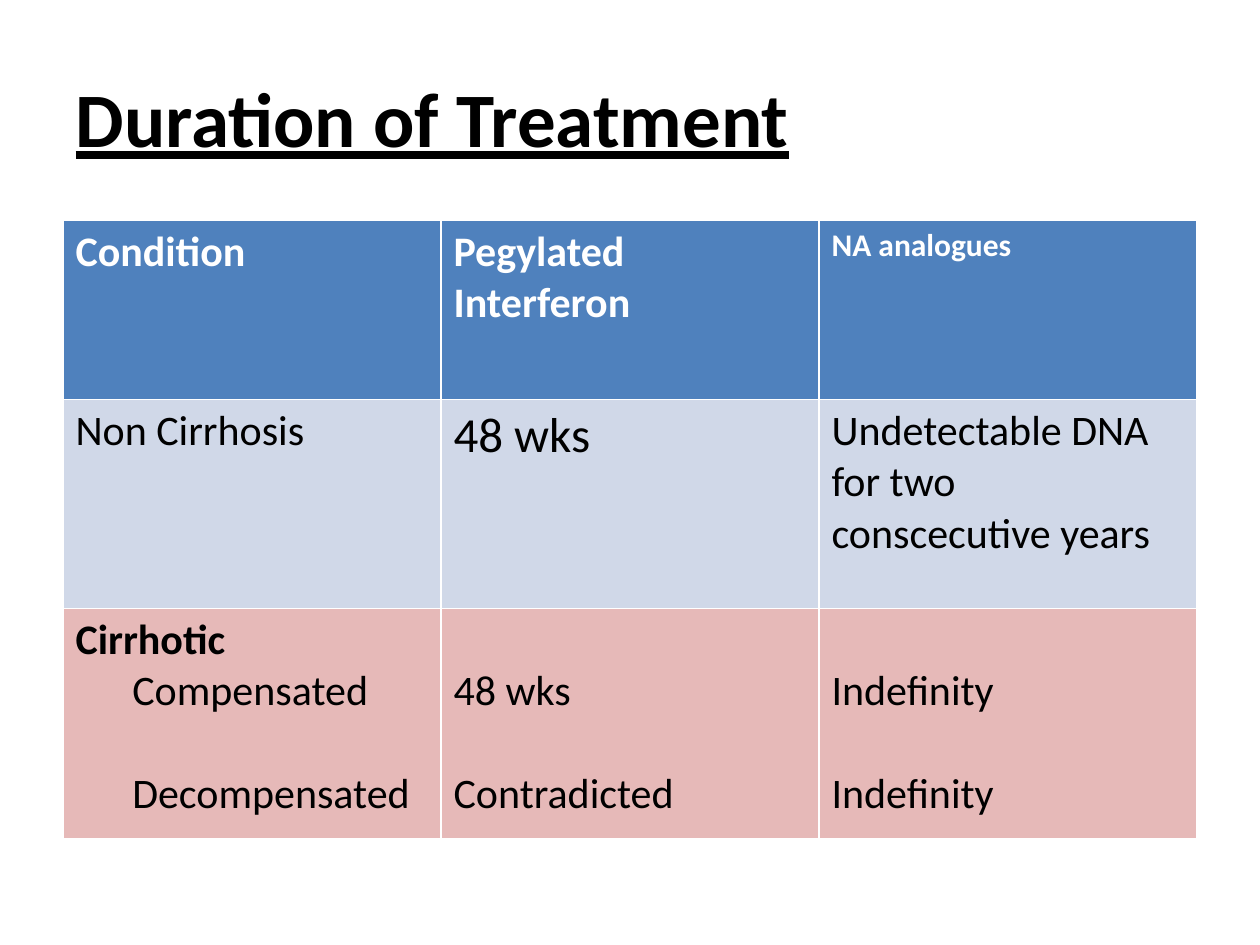
import pptx
import pptx.util
import pptx.dml.color
import pptx.enum.text

COLORS = {
    "ink": "000000",
    "white": "FFFFFF",
    "header": "4F81BD",
    "non_cirrhosis": "D0D8E8",
    "cirrhotic": "E6B9B8",
}
SLIDE_WIDTH, SLIDE_HEIGHT = pptx.util.Inches(10), pptx.util.Inches(7.5)
MARGIN = 0.05
LINE = 29.3
CELL_TOP = 0.05


def rgb(name):
    return pptx.dml.color.RGBColor.from_string(COLORS[name])


def place(left, top, width, height):
    return (
        int(SLIDE_WIDTH * left),
        int(SLIDE_HEIGHT * top),
        int(SLIDE_WIDTH * width),
        int(SLIDE_HEIGHT * height),
    )


def write(paragraph, text, size=24, color="ink", bold=False, underline=False,
          indent=0, before=0):
    paragraph.alignment = pptx.enum.text.PP_ALIGN.LEFT
    paragraph.space_before = pptx.util.Pt(before)
    if indent:
        properties = paragraph._p.get_or_add_pPr()
        properties.set("marL", str(pptx.util.Inches(indent)))
    run = paragraph.add_run()
    run.text = text
    run.font.name = "Calibri"
    run.font.size = pptx.util.Pt(size)
    run.font.bold = bold
    run.font.underline = underline
    run.font.color.rgb = rgb(color)


def add_title(slide, text):
    title = slide.shapes.title
    title.left, title.top, title.width, title.height = place(
        MARGIN, 0.04, 1 - 2 * MARGIN, 1 / 6)
    title.text_frame.vertical_anchor = pptx.enum.text.MSO_ANCHOR.MIDDLE
    write(title.text_frame.paragraphs[0], text, size=44, bold=True, underline=True)


def fill_cell(cell, lines, fill, skipped_lines=0):
    cell.fill.solid()
    cell.fill.fore_color.rgb = rgb(fill)
    cell.margin_top = pptx.util.Inches(CELL_TOP) + pptx.util.Pt(LINE * skipped_lines)
    for index, (text, style) in enumerate(lines):
        frame = cell.text_frame
        paragraph = frame.add_paragraph() if index else frame.paragraphs[0]
        write(paragraph, text, **style)


def add_treatment_table(slide, rows, heights):
    bounds = place(MARGIN, 1.75 / 7.5, 1 - 2 * MARGIN, sum(heights) / 7.5)
    table = slide.shapes.add_table(len(rows), len(rows[0][1]), *bounds).table
    for row, height, (fill, cells) in zip(table.rows, heights, rows):
        row.height = pptx.util.Inches(height)
        for cell, (lines, skipped_lines) in zip(row.cells, cells):
            fill_cell(cell, lines, fill, skipped_lines)


def main():
    deck = pptx.Presentation()
    deck.slide_width, deck.slide_height = SLIDE_WIDTH, SLIDE_HEIGHT
    slide = deck.slides.add_slide(deck.slide_layouts[5])
    add_title(slide, "Duration of Treatment")

    heading = {"color": "white", "bold": True}
    stage = {"indent": 0.45}
    spaced = {"before": LINE}
    rows = [
        ("header", [
            ([("Condition", heading)], 0),
            ([("Pegylated Interferon", heading)], 0),
            ([("NA analogues", {**heading, "size": 18})], 0),
        ]),
        ("non_cirrhosis", [
            ([("Non Cirrhosis", {})], 0),
            ([("48 wks", {"size": 28})], 0),
            ([("Undetectable DNA for two conscecutive years", {})], 0),
        ]),
        ("cirrhotic", [
            ([("Cirrhotic", {"bold": True}), ("Compensated", stage),
              ("Decompensated", {**stage, **spaced})], 0),
            ([("48 wks", {}), ("Contradicted", spaced)], 1),
            ([("Indefinity", {}), ("Indefinity", spaced)], 1),
        ]),
    ]
    add_treatment_table(slide, rows, heights=[1.42, 1.66, 1.83])
    deck.save("out.pptx")


if __name__ == "__main__":
    main()
